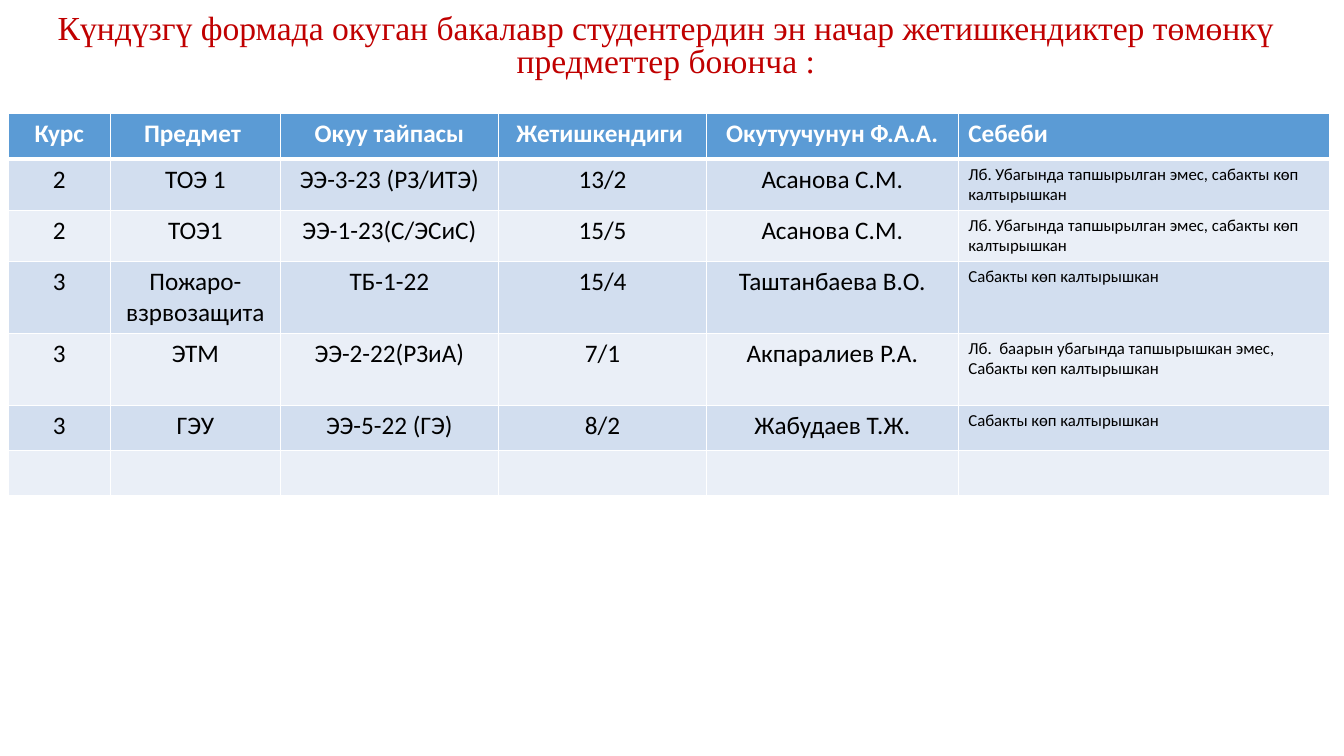
from lxml.etree import SubElement
from pptx import Presentation
from pptx.dml.color import RGBColor
from pptx.enum.text import MSO_ANCHOR, MSO_AUTO_SIZE, PP_ALIGN
from pptx.oxml.ns import qn
from pptx.util import Cm, Pt

COLORS = {
    "title": "C00000",
    "header": "5B9BD5",
    "odd_row": "D2DEEF",
    "even_row": "EAEFF7",
    "white": "FFFFFF",
    "black": "000000",
}

HEADINGS = ["Курс", "Предмет ", "Окуу тайпасы", "Жетишкендиги ", "Окутуучунун Ф.А.А.", "Себеби"]
SUBJECTS = [
    ["2", "ТОЭ 1", "ЭЭ-3-23 (РЗ/ИТЭ)", "13/2", "Асанова С.М.",
     "Лб. Убагында тапшырылган эмес, сабакты көп калтырышкан"],
    ["2", "ТОЭ1", "ЭЭ-1-23(С/ЭСиС)", "15/5", "Асанова С.М.",
     "Лб. Убагында тапшырылган эмес, сабакты көп калтырышкан"],
    ["3", "Пожаро-взрвозащита", "ТБ-1-22", "15/4", "Таштанбаева В.О.",
     "Сабакты көп калтырышкан"],
    ["3", "ЭТМ", "ЭЭ-2-22(РЗиА)", "7/1", "Акпаралиев Р.А.",
     "Лб.  баарын убагында тапшырышкан эмес,\nСабакты көп калтырышкан"],
    ["3", "ГЭУ", "ЭЭ-5-22 (ГЭ)", "8/2", "Жабудаев Т.Ж.",
     "Сабакты көп калтырышкан"],
    [""] * len(HEADINGS),
]
COLUMN_WIDTHS = [2.59, 4.27, 5.51, 5.23, 6.35, 9.35]
ROW_HEIGHTS = [1.14, 1.29, 1.29, 1.81, 1.81, 1.14, 1.14]


def write(frame, text, size=18, font="Calibri", color="black", bold=False,
          align=PP_ALIGN.CENTER, line_spacing=None, space_before=None):
    frame.text = text
    for paragraph in frame.paragraphs:
        paragraph.alignment = align
        paragraph.line_spacing = line_spacing
        paragraph.space_before = space_before
        paragraph.font.size = Pt(size)
        for run in paragraph.runs:
            run.font.size = Pt(size)
            run.font.name = font
            run.font.bold = bold
            run.font.color.rgb = RGBColor.from_string(COLORS[color])


def outline(cell, bottom):
    """Give the cell white borders of 1 pt, with its own width in points at the bottom."""
    properties = cell._tc.get_or_add_tcPr()
    for side, width in (("L", 1), ("R", 1), ("T", 1), ("B", bottom)):
        border = SubElement(properties, qn(f"a:ln{side}"), w=str(Pt(width)))
        fill = SubElement(border, qn("a:solidFill"))
        SubElement(fill, qn("a:srgbClr"), val=COLORS["white"])


presentation = Presentation()
presentation.slide_width = Cm(33.87)
presentation.slide_height = Cm(19.05)
slide = presentation.slides.add_slide(presentation.slide_layouts[5])

title = slide.shapes.title
title.left, title.top, title.width, title.height = Cm(0.33), Cm(0.2), Cm(32.9), Cm(1.98)
title.text_frame.word_wrap = True
title.text_frame.auto_size = MSO_AUTO_SIZE.NONE
title.text_frame.vertical_anchor = MSO_ANCHOR.MIDDLE
write(title.text_frame,
      "Күндүзгү формада окуган бакалавр студентердин эн начар жетишкендиктер "
      "төмөнкү предметтер боюнча :",
      size=24, font="Times New Roman", color="title", line_spacing=0.8, space_before=Pt(10))

results = slide.shapes.add_table(
    len(ROW_HEIGHTS), len(COLUMN_WIDTHS), Cm(0.2), Cm(2.87),
    Cm(sum(COLUMN_WIDTHS)), Cm(sum(ROW_HEIGHTS))).table
for column, width in zip(results.columns, COLUMN_WIDTHS):
    column.width = Cm(width)
for row, height in zip(results.rows, ROW_HEIGHTS):
    row.height = Cm(height)

for row_index, values in enumerate([HEADINGS] + SUBJECTS):
    is_header = row_index == 0
    row_color = "header" if is_header else "odd_row" if row_index % 2 else "even_row"
    for column_index, value in enumerate(values):
        is_reason = column_index == len(HEADINGS) - 1
        cell = results.cell(row_index, column_index)
        outline(cell, bottom=3 if is_header else 1)
        cell.fill.solid()
        cell.fill.fore_color.rgb = RGBColor.from_string(COLORS[row_color])
        write(cell.text_frame, value,
              size=12 if is_reason and not is_header else 18,
              color="white" if is_header else "black",
              bold=is_header,
              align=PP_ALIGN.LEFT if is_reason else PP_ALIGN.CENTER)

presentation.save("out.pptx")
